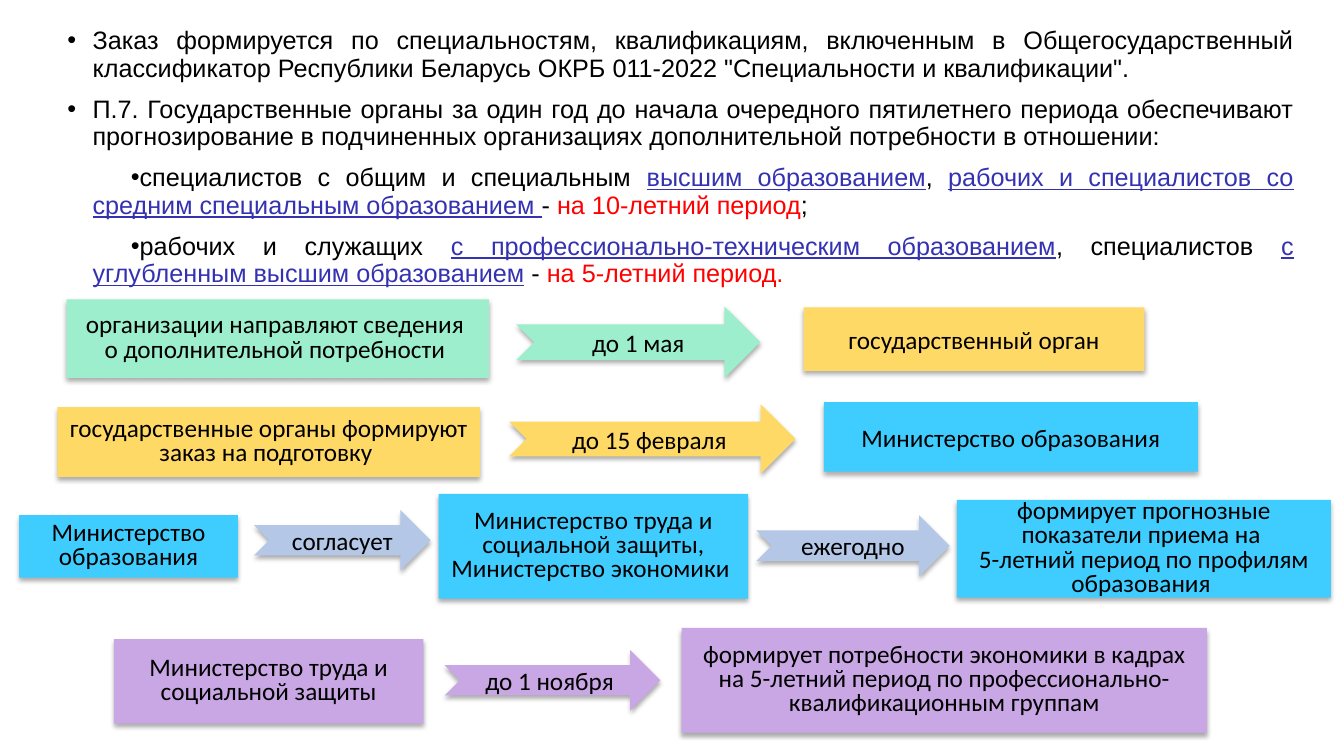
from lxml.etree import SubElement
from pptx import Presentation
from pptx.dml.color import RGBColor
from pptx.enum.shapes import MSO_SHAPE
from pptx.enum.text import MSO_ANCHOR, PP_ALIGN
from pptx.oxml.ns import qn
from pptx.util import Inches, Pt

COLORS = {
    "black": "000000", "link": "3532B2", "red": "FF0000",
    "mint": "9CEECD", "yellow": "FFD966", "sky": "3FCDFF",
    "steel": "B4C7E7", "lilac": "C9A6E4",
}

deck = Presentation()
deck.slide_width, deck.slide_height = Inches(13.33), Inches(7.5)
slide = deck.slides.add_slide(deck.slide_layouts[6])
COL, ROW = deck.slide_width / 133.3, deck.slide_height / 75


def grid_box(left, top, width, height):
    """Turn grid columns and rows into slide lengths."""
    return [round(n * unit) for n, unit in zip((left, top, width, height), (COL, ROW) * 2)]


def add_run(paragraph, text, font_name, color="black"):
    run = paragraph.add_run()
    run.text = text
    font_format = {"name": font_name, "size": Pt(18), "underline": color == "link"}
    for attribute, value in font_format.items():
        setattr(run.font, attribute, value)
    run.font.color.rgb = RGBColor.from_string(COLORS[color])


# Order rules: first-line indent in inches, then coloured parts
order_rules = [
    (-0.25, [('Заказ формируется по специальностям, квалификациям, включенным в '
              'Общегосударственный классификатор Республики Беларусь ОКРБ 011-2022 '
              '"Специальности и квалификации".', "black")]),
    (-0.25, [("П.7. Государственные органы за один год до начала очередного пятилетнего "
              "периода обеспечивают прогнозирование в подчиненных организациях "
              "дополнительной потребности в отношении:", "black")]),
    (0.38, [("специалистов с общим и специальным ", "black"),
            ("высшим образованием", "link"),
            (", ", "black"),
            ("рабочих и специалистов со средним специальным образованием ", "link"),
            ("- ", "black"),
            ("на 10-летний период", "red"),
            (";", "black")]),
    (0.38, [("рабочих и служащих ", "black"),
            ("с профессионально-техническим образованием", "link"),
            (", специалистов ", "black"),
            ("с углубленным высшим образованием", "link"),
            (" - ", "black"),
            ("на 5-летний период.", "red")]),
]
rules_frame = slide.shapes.add_textbox(*grid_box(5.7, 2.3, 123.6, 47.6)).text_frame
rules_frame.word_wrap = True
rule_format = {"alignment": PP_ALIGN.JUSTIFY, "line_spacing": 0.9, "space_before": Pt(10)}
for number, (indent, parts) in enumerate(order_rules):
    rule = rules_frame.add_paragraph() if number else rules_frame.paragraphs[0]
    for attribute, value in rule_format.items():
        setattr(rule, attribute, value)
    properties = rule._p.get_or_add_pPr()
    properties.set("marL", str(Inches(0.25)))
    properties.set("indent", str(Inches(indent)))
    SubElement(properties, qn("a:buFont"), typeface="Arial")
    SubElement(properties, qn("a:buChar"), char="•")
    for text, color in parts:
        add_run(rule, text, "Arial", color)

# Steps: outline, colour, grid place, line spacing, text
BLOCK, ARROW = MSO_SHAPE.RECTANGLE, MSO_SHAPE.NOTCHED_RIGHT_ARROW
steps = [
    (ARROW, "mint", (51.2, 30.4, 24.2, 7.1), 1.0, "до 1 мая"),
    (BLOCK, "mint", (6.6, 29.7, 41.9, 7.8), 0.8,
     "организации направляют сведения \nо дополнительной потребности "),
    (BLOCK, "yellow", (79.7, 30.5, 33.8, 6.3), 1.0, "государственный орган"),
    (BLOCK, "yellow", (5.7, 40.4, 41.9, 6.9), 0.8,
     "государственные органы формируют заказ на подготовку "),
    (ARROW, "yellow", (50.5, 40.1, 28.4, 6.9), 1.0, "до 15 февраля "),
    (BLOCK, "sky", (81.7, 39.9, 37.1, 6.9), 1.0, "Министерство образования"),
    (BLOCK, "sky", (1.9, 51.1, 21.7, 6.2), 0.8, "Министерство образования"),
    (ARROW, "steel", (25.2, 50.6, 17.5, 6), 1.0, "согласует"),
    (BLOCK, "sky", (43.5, 49, 30.7, 10.4), 0.8,
     "Министерство труда и социальной защиты, Министерство экономики "),
    (ARROW, "steel", (75, 51.1, 19.2, 6.1), 1.0, "ежегодно"),
    (BLOCK, "sky", (94.9, 49.6, 37.1, 9.7), 0.8,
     "формирует прогнозные показатели приема на \n"
     "5-летний период по профилям образования "),
    (BLOCK, "lilac", (11.3, 63.4, 30.7, 8.4), 0.8, "Министерство труда и социальной защиты"),
    (ARROW, "lilac", (44.1, 64.5, 21.4, 6), 1.0, "до 1 ноября "),
    (BLOCK, "lilac", (67.6, 62.3, 52.1, 10.4), 0.8,
     "формирует потребности экономики в кадрах на 5-летний период по "
     "профессионально-квалификационным группам"),
]
for outline, color, place, spacing, text in steps:
    step = slide.shapes.add_shape(outline, *grid_box(*place))
    step.fill.solid()
    step.fill.fore_color.rgb = RGBColor.from_string(COLORS[color])
    step.line.fill.background()
    step.shadow.inherit = False
    effects = step._element.spPr.find(qn("a:effectLst"))
    shadow = SubElement(effects, qn("a:outerShdw"), blurRad=str(Pt(3.5)),
                        dist=str(Pt(2.2)), dir="5400000", algn="ctr", rotWithShape="0")
    shade = SubElement(shadow, qn("a:srgbClr"), val=COLORS["black"])
    SubElement(shade, qn("a:alpha"), val="32000")

    frame = step.text_frame
    frame.word_wrap = True
    frame.vertical_anchor = MSO_ANCHOR.MIDDLE
    for number, line in enumerate(text.split("\n")):
        paragraph = frame.add_paragraph() if number else frame.paragraphs[0]
        paragraph.alignment = PP_ALIGN.CENTER
        paragraph.line_spacing = spacing
        add_run(paragraph, line, "Calibri")

deck.save("out.pptx")
